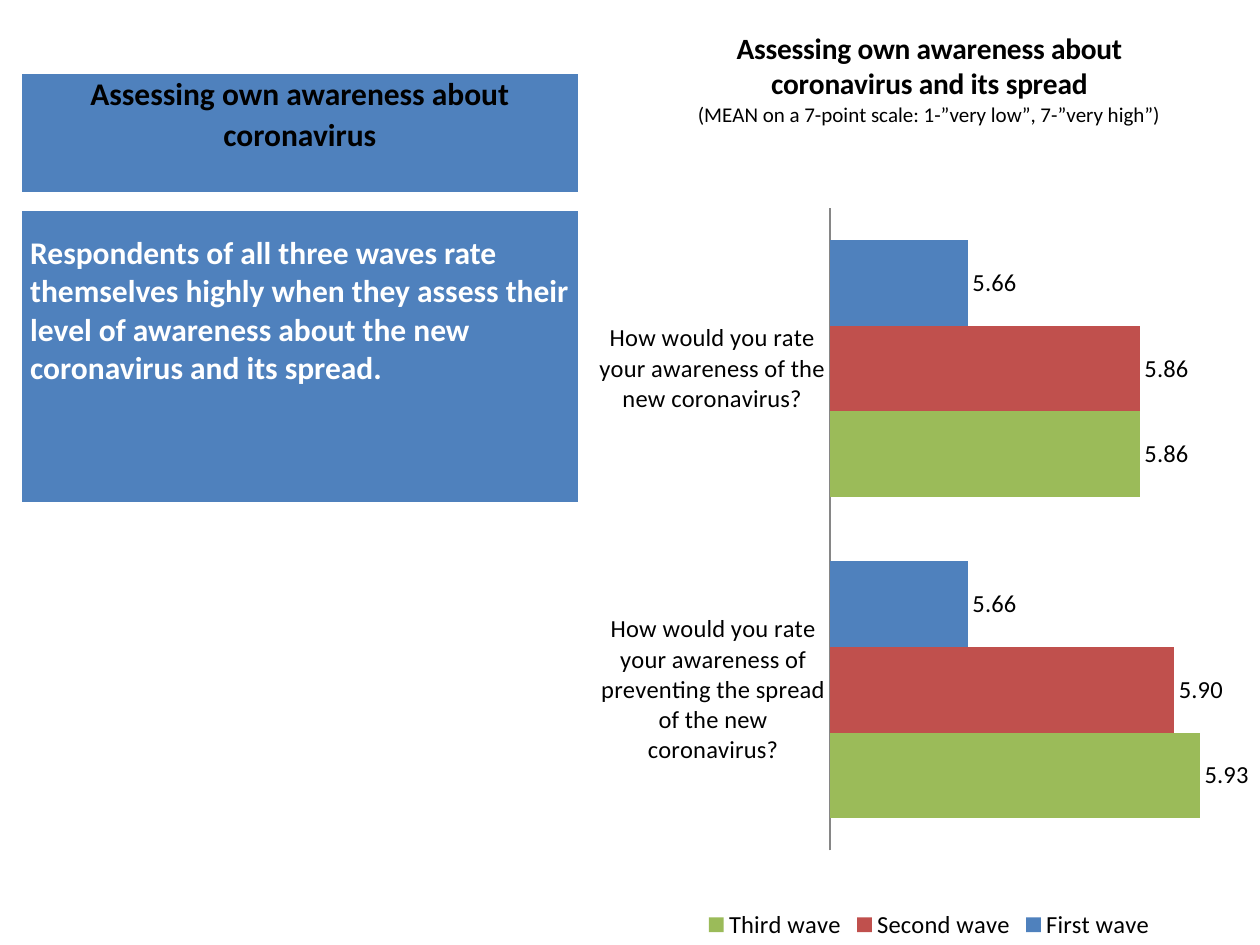
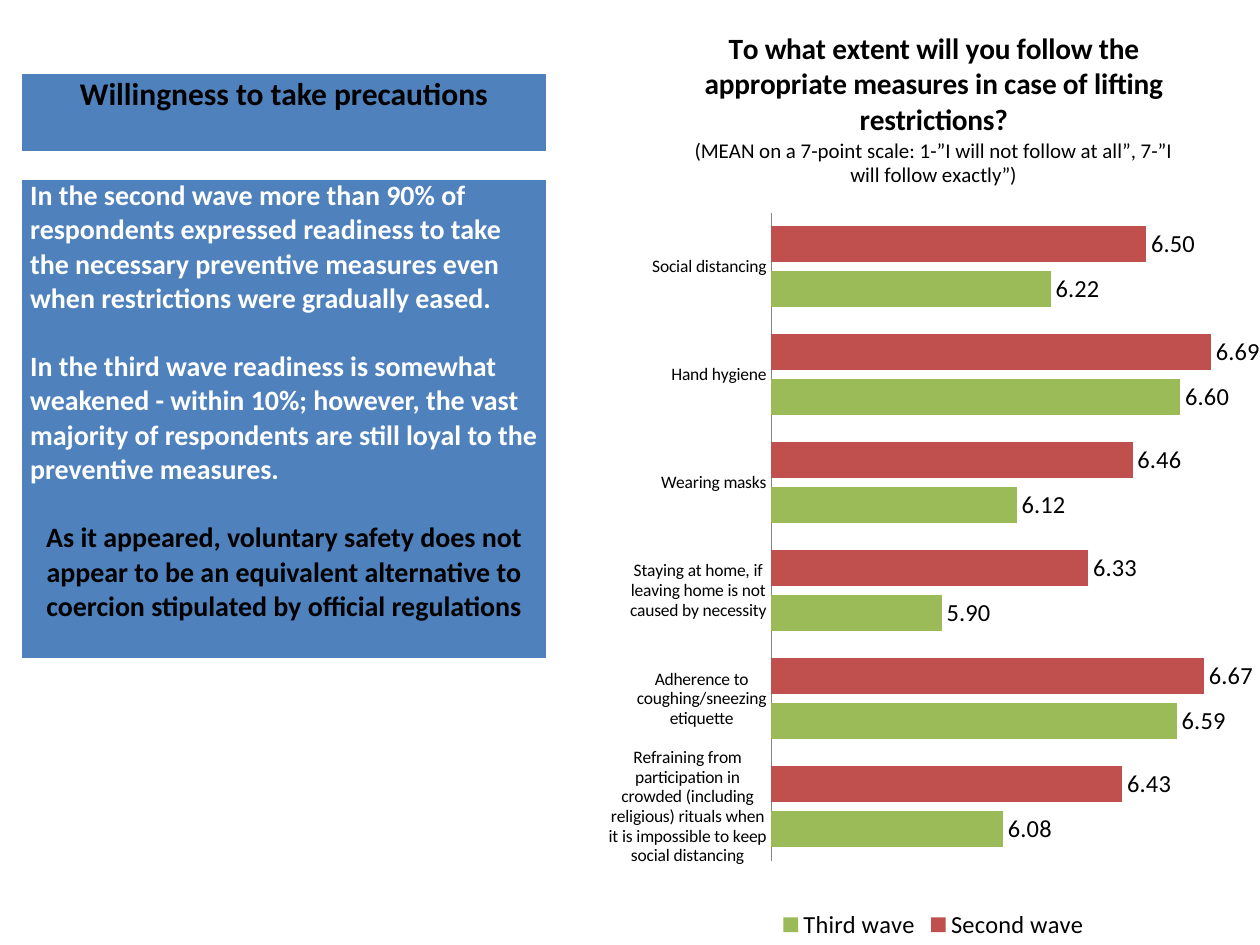
from dataclasses import dataclass

from pptx import Presentation
from pptx import util as u
from pptx.chart.data import CategoryChartData
from pptx.dml.color import RGBColor
from pptx.enum import chart as ch, text
from pptx.oxml import parse_xml
from pptx.oxml.ns import nsdecls, qn


@dataclass(frozen=True)
class Theme:
    font: str = "Calibri"
    ink: str = "000000"
    paper: str = "FFFFFF"
    panel: str = "4F81BD"
    axis: str = "868686"
    heading: float = 18
    chart_title: float = 16.8
    chart_note: float = 12
    chart_text: float = 14


THEME = Theme()
WAVE_COLORS = {"First wave": "4F81BD", "Second wave": "C0504D", "Third wave": "9BBB59"}
WIDTH, HEIGHT = 10, 7.5
PANEL_LEFT = 0.17
HEADING_TOP = 0.58
NUMBER_FORMAT = "###0.00"


def set_font(font, size, color=THEME.ink, bold=False):
    font.name = THEME.font
    font.size = u.Pt(size)
    font.bold = bold
    font.color.rgb = RGBColor.from_string(color)


def add_borders(cell):
    """Draw white cell edges, with a heavier one at the bottom."""
    properties = cell._tc.get_or_add_tcPr()
    for index, (side, points) in enumerate((("L", 1), ("R", 1), ("T", 1), ("B", 3))):
        properties.insert(index, parse_xml(
            f'<a:ln{side} {nsdecls("a")} w="{u.Pt(points)}"><a:solidFill>'
            f'<a:srgbClr val="{THEME.paper}"/></a:solidFill></a:ln{side}>'))


def add_panel(slide, top, width, height, top_margin=0):
    """Add a one-cell table in the left column and return its text frame."""
    table = slide.shapes.add_table(
        1, 1, u.Inches(PANEL_LEFT), u.Inches(top), u.Inches(width), u.Inches(height)).table
    cell = table.cell(0, 0)
    cell.fill.solid()
    cell.fill.fore_color.rgb = RGBColor.from_string(THEME.panel)
    cell.margin_left = cell.margin_right = u.Inches(0.07)
    cell.margin_top, cell.margin_bottom = u.Inches(top_margin), 0
    add_borders(cell)
    return cell.text_frame


def add_heading(slide, wording, width, height):
    para = add_panel(slide, HEADING_TOP, width, height).paragraphs[0]
    para.text = wording
    para.alignment = text.PP_ALIGN.CENTER
    para.line_spacing = 1.07
    set_font(para.font, THEME.heading, bold=True)


def add_findings(slide, findings, conclusion, size, top, width, height, top_margin=0):
    """Write the findings in white, then a centred dark conclusion if there is one."""
    frame = add_panel(slide, top, width, height, top_margin)
    for index, wording in enumerate(findings + conclusion):
        para = frame.add_paragraph() if index else frame.paragraphs[0]
        para.text = wording
        if index:
            para.space_before = u.Pt(size * 1.22)
        closing = index >= len(findings)
        para.alignment = text.PP_ALIGN.CENTER if closing else text.PP_ALIGN.LEFT
        set_font(para.font, size, THEME.ink if closing else THEME.paper, bold=True)


def place_plot(chart, x, y, width, height):
    """Fix the inner plot area, in shares of the chart."""
    area = chart._chartSpace.chart.plotArea
    for layout in area.findall(qn("c:layout")):
        area.remove(layout)
    sizes = "".join(f'<c:{name} val="{value}"/>' for name, value in
                    (("x", x), ("y", y), ("w", width), ("h", height)))
    area.insert(0, parse_xml(
        f'<c:layout {nsdecls("c")}><c:manualLayout><c:layoutTarget val="inner"/>'
        f'<c:xMode val="edge"/><c:yMode val="edge"/>{sizes}</c:manualLayout></c:layout>'))


def add_chart_title(chart, title, note):
    frame = chart.chart_title.text_frame
    lines = ((frame.paragraphs[0], title, THEME.chart_title, True),
             (frame.add_paragraph(), note, THEME.chart_note, False))
    for para, wording, size, bold in lines:
        span = para.add_run()
        span.text = wording
        set_font(para.font, size, bold=bold)
        set_font(span.font, size, bold=bold)


def add_wave_chart(slide, left, title, note, categories, waves, scale, plot_area,
                   overlap=0, category_size=THEME.chart_text):
    """Add a full-height bar chart from left to the right edge of the slide."""
    data = CategoryChartData(number_format=NUMBER_FORMAT)
    data.categories = categories
    for name, values in waves.items():
        data.add_series(name, values)
    chart = slide.shapes.add_chart(
        ch.XL_CHART_TYPE.BAR_CLUSTERED, u.Inches(left), 0,
        u.Inches(WIDTH - left), u.Inches(HEIGHT), data).chart
    set_font(chart.font, THEME.chart_text)
    add_chart_title(chart, title, note)
    place_plot(chart, *plot_area)

    chart.has_legend = True
    chart.legend.position = ch.XL_LEGEND_POSITION.BOTTOM
    chart.legend.include_in_layout = False

    axis = chart.category_axis
    axis.reverse_order = True
    axis.major_tick_mark = ch.XL_TICK_MARK.NONE
    axis.format.line.color.rgb = RGBColor.from_string(THEME.axis)
    set_font(axis.tick_labels.font, category_size)

    values_axis = chart.value_axis
    values_axis.minimum_scale, values_axis.maximum_scale = scale
    values_axis.has_major_gridlines = False
    values_axis.visible = False

    plot = chart.plots[0]
    plot.gap_width, plot.overlap, plot.vary_by_categories = 75, overlap, False
    for series in plot.series:
        series.format.fill.solid()
        series.format.fill.fore_color.rgb = RGBColor.from_string(WAVE_COLORS[series.name])
        labels = series.data_labels
        labels.show_value = True
        labels.number_format = NUMBER_FORMAT
        labels.number_format_is_linked = False
        labels.position = ch.XL_LABEL_POSITION.OUTSIDE_END
        set_font(labels.font, THEME.chart_text)


def build_awareness(slide):
    add_wave_chart(
        slide, 4.75, "Assessing own awareness about coronavirus and its spread",
        "(MEAN on a 7-point scale: 1-”very low”, 7-”very high”)",
        ["How would you rate your awareness of the new coronavirus?",
         "How would you rate your awareness of preventing the spread of the new coronavirus?"],
        {"First wave": (5.66, 5.66), "Second wave": (5.86, 5.90), "Third wave": (5.86, 5.93)},
        scale=(5.5, 6), plot_area=(0.35, 0.22, 0.65, 0.68))
    add_heading(slide, "Assessing own awareness about coronavirus", 4.42, 0.96)
    add_findings(
        slide,
        ["Respondents of all three waves rate themselves highly when they assess their "
         "level of awareness about the new coronavirus and its spread."],
        [], 18, 1.67, 4.42, 2.33, top_margin=0.19)


def build_precautions(slide):
    add_wave_chart(
        slide, 4.83,
        "To what extent will you follow the appropriate measures in case of lifting restrictions?",
        "(MEAN on a 7-point scale: 1-”I will not follow at all”, 7-”I will follow exactly”)",
        ["Social distancing", "Hand hygiene", "Wearing masks",
         "Staying at home, if leaving home is not caused by necessity",
         "Adherence to coughing/sneezing etiquette",
         "Refraining from participation in crowded (including religious) rituals when it is "
         "impossible to keep social distancing"],
        {"Second wave": (6.50, 6.69, 6.46, 6.33, 6.67, 6.43),
         "Third wave": (6.22, 6.60, 6.12, 5.90, 6.59, 6.08)},
        scale=(5.4, 6.8), plot_area=(0.25, 0.225, 0.735, 0.686),
        overlap=-25, category_size=10)
    add_heading(slide, "Willingness to take precautions", 4.17, 0.64)
    add_findings(
        slide,
        ["In the second wave more than 90% of respondents expressed readiness to take the "
         "necessary preventive measures even when restrictions were gradually eased.",
         "In the third wave readiness is somewhat weakened - within 10%; however, the vast "
         "majority of respondents are still loyal to the preventive measures."],
        ["As it appeared, voluntary safety does not appear to be an equivalent alternative to "
         "coercion stipulated by official regulations"],
        16, 1.42, 4.17, 3.82)


def main():
    deck = Presentation()
    deck.slide_width, deck.slide_height = u.Inches(WIDTH), u.Inches(HEIGHT)
    blank = deck.slide_layouts.get_by_name("Blank")
    for build in (build_awareness, build_precautions):
        build(deck.slides.add_slide(blank))
    deck.save("out.pptx")


if __name__ == "__main__":
    main()
